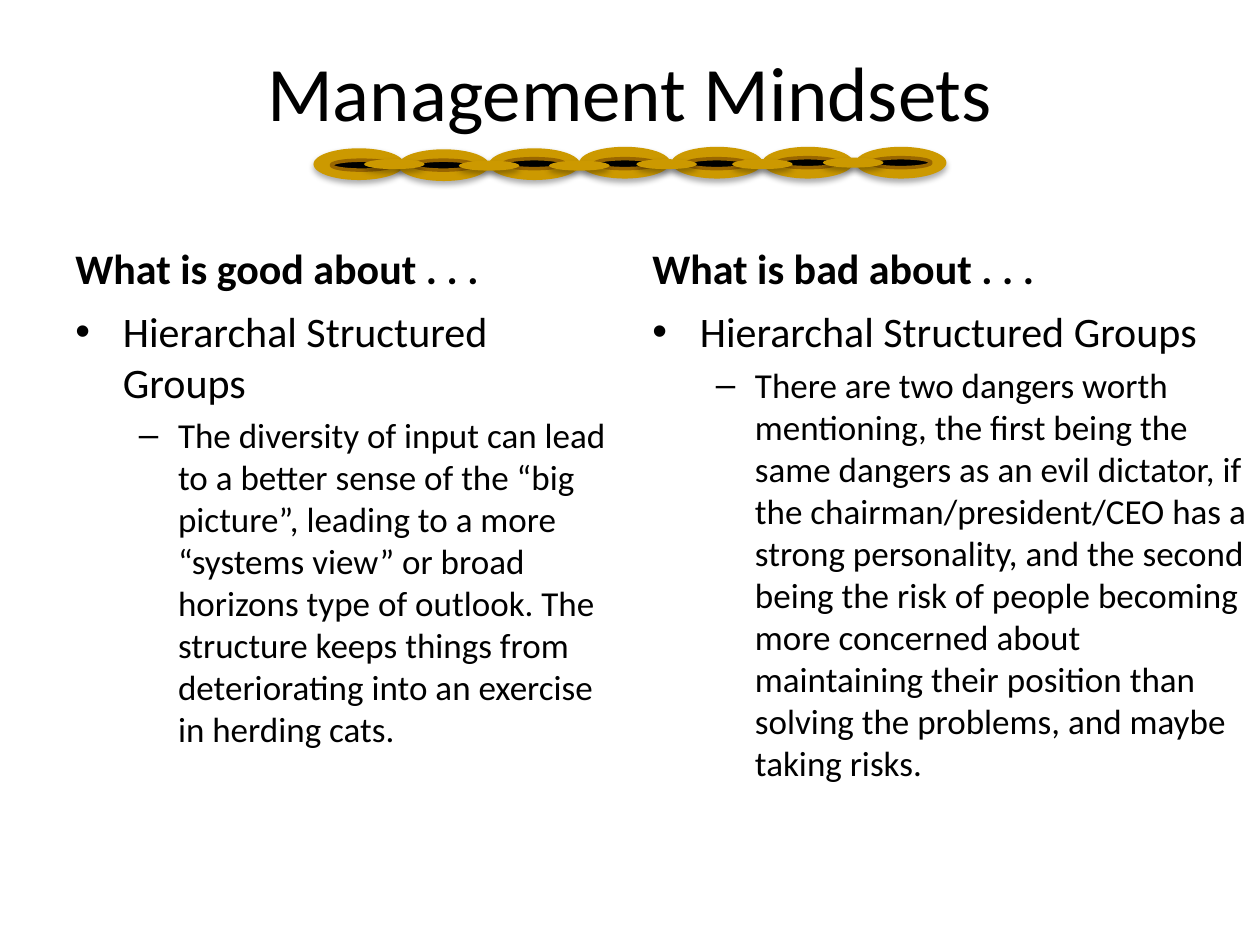
"""Build the Management Mindsets slide: two columns under a gold chain."""
from typing import NamedTuple

from lxml.etree import SubElement
from pptx import Presentation
from pptx.dml.color import RGBColor
from pptx.enum.shapes import MSO_SHAPE
from pptx.enum.text import MSO_ANCHOR, MSO_AUTO_SIZE, PP_ALIGN
from pptx.oxml.ns import qn
from pptx.util import Cm, Pt

BLACK, GOLD, BROWN = "000000", "CC9900", "996600"


class Disc(NamedTuple):
    left: float
    top: float


class Column(NamedTuple):
    left: float
    width: float
    head: str
    point: str
    detail: str


RINGS = [Disc(6.32, 2.99), Disc(8.03, 3.01), Disc(9.86, 2.99), Disc(11.68, 2.96),
         Disc(13.54, 2.96), Disc(15.37, 2.96), Disc(17.25, 2.96)]
HOLES = [Disc(6.68, 3.23), Disc(8.33, 3.23), Disc(10.16, 3.2), Disc(11.99, 3.2),
         Disc(13.84, 3.2), Disc(15.67, 3.18), Disc(17.55, 3.18)]
KNOTS = [Disc(7.34, 3.21), Disc(9.25, 3.24), Disc(11.07, 3.24), Disc(12.83, 3.21),
         Disc(14.76, 3.21), Disc(16.59, 3.18)]

COLUMNS = [
    Column(1.27, 11.23, "What is good about . . .", "Hierarchal Structured Groups",
           "The diversity of input can lead to a better sense of the “big picture”, "
           "leading to a more “systems view” or broad horizons type of outlook. The "
           "structure keeps things from deteriorating into an exercise in herding cats."),
    Column(12.9, 12.49, "What is bad about . . .", "Hierarchal Structured Groups",
           "There are two dangers worth mentioning, the first being the same dangers as "
           "an evil dictator, if the chairman/president/CEO has a strong personality, and "
           "the second being the risk of people becoming more concerned about maintaining "
           "their position than solving the problems, and maybe taking risks."),
]


def color(code: str) -> RGBColor:
    return RGBColor.from_string(code)


def write(para, text: str, size: float = 24, bold: bool = False, align=PP_ALIGN.LEFT,
          gap: float = 0.2, level: int = 0, bullet: str = "",
          indent: float = 0, hang: float = 0) -> None:
    para.alignment, para.level = align, level
    para.space_before = Pt(size * gap)
    run = para.add_run()
    run.text = text
    font = run.font
    font.name, font.size, font.bold = "Calibri", Pt(size), bold
    font.color.rgb = color(BLACK)
    if bullet:
        props = para._p.get_or_add_pPr()
        props.set("marL", str(Cm(indent)))
        props.set("indent", str(-Cm(hang)))
        SubElement(props, qn("a:buFont"), typeface="Arial")
        SubElement(props, qn("a:buChar"), char=bullet)


def add_box(slide, left: float, top: float, width: float, height: float, anchor):
    frame = slide.shapes.add_textbox(Cm(left), Cm(top), Cm(width), Cm(height)).text_frame
    frame.word_wrap, frame.vertical_anchor = True, anchor
    return frame


def add_column(slide, col: Column) -> None:
    head = add_box(slide, col.left, 4.26, 11.23, 1.78, MSO_ANCHOR.BOTTOM)
    write(head.paragraphs[0], col.head, bold=True)
    body = add_box(slide, col.left, 6.04, col.width, 10.97, MSO_ANCHOR.TOP)
    write(body.paragraphs[0], col.point, bullet="•", indent=0.96, hang=0.96)
    write(body.add_paragraph(), col.detail, size=20, level=1, bullet="–",
          indent=2.07, hang=0.79)


def add_disc(group, disc: Disc, width: float, height: float, fill: str, edge: str = ""):
    shape = group.shapes.add_shape(MSO_SHAPE.OVAL, Cm(disc.left), Cm(disc.top),
                                   Cm(width), Cm(height))
    shape.fill.solid()
    shape.fill.fore_color.rgb = color(fill)
    shape.shadow.inherit = False
    if edge:
        shape.line.color.rgb, shape.line.width = color(edge), Pt(2)
    else:
        shape.line.fill.background()
        add_shade(shape)


def add_shade(shape) -> None:
    effect = shape._element.spPr.find(qn("a:effectLst"))
    shade = SubElement(effect, qn("a:outerShdw"), blurRad=str(Pt(3.5)),
                       dist=str(Pt(2.2)), dir="5400000", rotWithShape="0")
    tint = SubElement(shade, qn("a:srgbClr"), val=BLACK)
    SubElement(tint, qn("a:alpha"), val="32000")


def add_chain(slide) -> None:
    group = slide.shapes.add_group_shape()
    for ring in RINGS:
        add_disc(group, ring, 1.83, 0.64, GOLD)
    for hole in HOLES:
        add_disc(group, hole, 1.22, 0.2, BLACK, BROWN)
    for knot in KNOTS:
        add_disc(group, knot, 1.22, 0.2, GOLD)


def add_title(slide, text: str) -> None:
    title = slide.shapes.title
    title.left, title.top, title.width, title.height = Cm(1.27), Cm(0.78), Cm(22.86), Cm(3.18)
    frame = title.text_frame
    frame.auto_size, frame.vertical_anchor = MSO_AUTO_SIZE.NONE, MSO_ANCHOR.TOP
    write(frame.paragraphs[0], text, size=44, align=PP_ALIGN.CENTER, gap=0)


def main() -> None:
    deck = Presentation()
    deck.slide_width, deck.slide_height = Cm(25.4), Cm(19.05)
    slide = deck.slides.add_slide(deck.slide_layouts[5])
    add_title(slide, "Management Mindsets")
    for col in COLUMNS:
        add_column(slide, col)
    add_chain(slide)
    deck.save("out.pptx")


if __name__ == "__main__":
    main()
